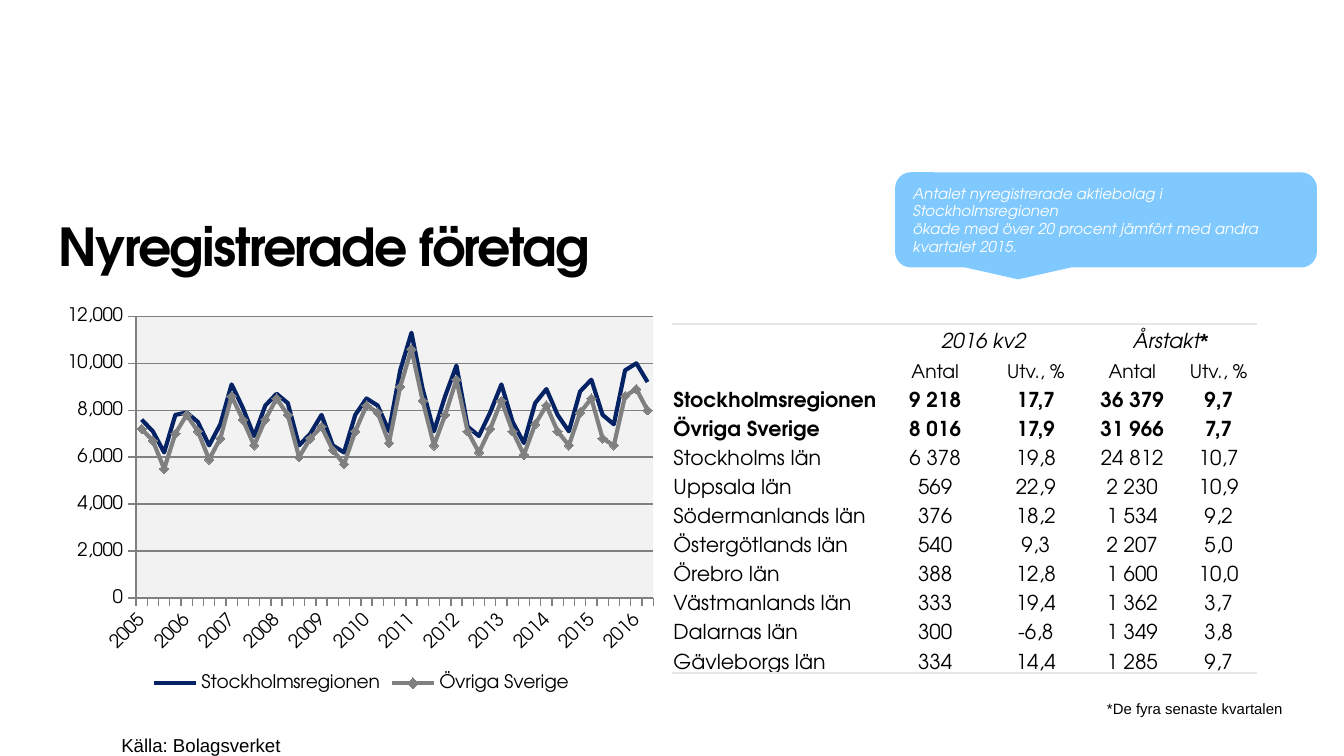
from pptx import Presentation
from pptx.chart.data import CategoryChartData
from pptx.dml.color import RGBColor
from pptx.enum.chart import XL_CHART_TYPE, XL_LEGEND_POSITION, XL_MARKER_STYLE, XL_TICK_MARK
from pptx.enum.shapes import MSO_SHAPE
from pptx.enum.text import MSO_ANCHOR, PP_ALIGN
from pptx.oxml import parse_xml
from pptx.oxml.ns import nsdecls, qn
from pptx.util import Pt

LINE_MARKERS = XL_CHART_TYPE.LINE_MARKERS
LEGEND_BOTTOM = XL_LEGEND_POSITION.BOTTOM
DIAMOND, NO_MARKER = XL_MARKER_STYLE.DIAMOND, XL_MARKER_STYLE.NONE
TICK_OUTSIDE = XL_TICK_MARK.OUTSIDE
CALLOUT = MSO_SHAPE.ROUNDED_RECTANGULAR_CALLOUT
TOP, MIDDLE, BOTTOM = MSO_ANCHOR.TOP, MSO_ANCHOR.MIDDLE, MSO_ANCHOR.BOTTOM
LEFT, CENTER = PP_ALIGN.LEFT, PP_ALIGN.CENTER

HEADING_FONT, NOTE_FONT = "TeX Gyre Adventor", "Arial"
BLACK, WHITE, BLUE, NAVY = "000000", "FFFFFF", "7FC9FF", "052364"
GRAY, PALE, RULE = "808080", "F2F2F2", "E6E6E6"
NO_TABLE_STYLE = "{2D5ABB26-0587-4C30-8999-92F81FD0307C}"

COLUMN_WIDTHS = [113.2, 55.6, 52.2, 51.2, 41.4]
ROWS = [
    ["", "2016 kv2", "", "Årstakt*", ""],
    ["", "Antal", "Utv., %", "Antal", "Utv., %"],
    ["Stockholmsregionen", "9 218", "17,7", "36 379", "9,7"],
    ["Övriga Sverige", "8 016", "17,9", "31 966", "7,7"],
    ["Stockholms län", "6 378", "19,8", "24 812", "10,7"],
    ["Uppsala län", "569", "22,9", "2 230", "10,9"],
    ["Södermanlands län", "376", "18,2", "1 534", "9,2"],
    ["Östergötlands län", "540", "9,3", "2 207", "5,0"],
    ["Örebro län", "388", "12,8", "1 600", "10,0"],
    ["Västmanlands län", "333", "19,4", "1 362", "3,7"],
    ["Dalarnas län", "300", "-6,8", "1 349", "3,8"],
    ["Gävleborgs län", "334", "14,4", "1 285", "9,7"],
]
ROW_FORMATS = {
    0: {"size": Pt(11), "italic": True},
    1: {"size": Pt(10)},
    2: {"size": Pt(11), "bold": True},
    3: {"size": Pt(11), "bold": True},
}
SERIES = {
    "Stockholmsregionen": (NAVY, NO_MARKER, [
        7600, 7100, 6200, 7800, 7900, 7500, 6500, 7400, 9100, 8100, 6900, 8200,
        8700, 8300, 6500, 7000, 7800, 6500, 6200, 7800, 8500, 8200, 7100, 9700,
        11300, 8900, 7100, 8600, 9900, 7300, 6900, 7900, 9100, 7500, 6600, 8300,
        8900, 7800, 7100, 8800, 9300, 7800, 7400, 9700, 10000, 9200]),
    "Övriga Sverige": (GRAY, DIAMOND, [
        7200, 6700, 5500, 7000, 7800, 7100, 5900, 6800, 8600, 7600, 6500, 7600,
        8500, 7800, 6000, 6800, 7300, 6300, 5700, 7100, 8200, 7900, 6600, 9000,
        10600, 8400, 6500, 7800, 9300, 7100, 6200, 7200, 8400, 7100, 6100, 7400,
        8200, 7100, 6500, 7900, 8500, 6800, 6500, 8600, 8900, 8000]),
}


def color(value):
    """Return the colour for a hex string."""
    return RGBColor.from_string(value)


def format_font(font, name, value, formats):
    """Set typeface, colour and the given format values on a font."""
    font.name = name
    font.color.rgb = color(value)
    for attribute, setting in formats.items():
        setattr(font, attribute, setting)


def set_margins(holder, margins):
    """Set the left, top, right and bottom margins of a frame or cell."""
    for side, margin in zip(("left", "top", "right", "bottom"), margins):
        setattr(holder, "margin_" + side, Pt(margin))


def add_text(slide, box, text, name, formats, line_spacing=None, tracking=0):
    """Add a text box of one paragraph without margins."""
    frame = slide.shapes.add_textbox(*map(Pt, box)).text_frame
    frame.word_wrap = True
    frame.vertical_anchor = TOP
    set_margins(frame, (0, 0, 0, 0))
    paragraph = frame.paragraphs[0]
    paragraph.line_spacing = line_spacing
    run = paragraph.add_run()
    run.text = text
    format_font(run.font, name, BLACK, formats)
    if tracking:
        run._r.get_or_add_rPr().set("spc", str(tracking))


def add_callout(slide, box):
    """Add the blue speech bubble."""
    shape = slide.shapes.add_shape(CALLOUT, *map(Pt, box))
    shape.shadow.inherit = False
    shape.fill.solid()
    shape.fill.fore_color.rgb = color(BLUE)
    shape.line.fill.background()
    shape.text_frame.word_wrap = True
    shape.text_frame.vertical_anchor = MIDDLE
    set_margins(shape.text_frame, (7.2, 3.6, 7.2, 3.6))
    paragraph = shape.text_frame.paragraphs[0]
    paragraph.text = ("Antalet nyregistrerade aktiebolag i Stockholmsregionen\v"
                      "ökade med över 20 procent jämfört med andra kvartalet 2015.")
    paragraph.alignment = LEFT
    for run in paragraph.runs:
        format_font(run.font, HEADING_FONT, WHITE, {"size": Pt(8), "italic": True})


def add_border(cell, tag):
    """Draw a pale rule along one side of a cell."""
    cell._tc.get_or_add_tcPr().insert(0, parse_xml(
        f'<a:{tag} {nsdecls("a")} w="12700"><a:solidFill><a:srgbClr val="{RULE}"/>'
        f'</a:solidFill></a:{tag}>'))


def fill_cell(cell, text, alignment, formats):
    """Write one table cell, with any asterisk in upright bold."""
    cell.fill.background()
    cell.vertical_anchor = BOTTOM
    set_margins(cell, (0.75, 0.75, 0.75, 0))
    paragraph = cell.text_frame.paragraphs[0]
    paragraph.alignment = alignment
    for part in filter(None, text.partition("*")):
        run = paragraph.add_run()
        run.text = part
        if part == "*":
            format_font(run.font, NOTE_FONT, BLACK, {**formats, "italic": False, "bold": True})
        else:
            format_font(run.font, HEADING_FONT, BLACK, formats)
    if not text:
        paragraph._p.append(parse_xml(f'<a:endParaRPr {nsdecls("a")} sz="1000"/>'))


def add_county_table(slide, box):
    """Add the table of new companies by county."""
    table = slide.shapes.add_table(len(ROWS), len(COLUMN_WIDTHS), *map(Pt, box)).table
    table.first_row = table.horz_banding = False
    table._tbl.tblPr.find(qn("a:tableStyleId")).text = NO_TABLE_STYLE
    for column, width in zip(table.columns, COLUMN_WIDTHS):
        column.width = Pt(width)
    for row_index, texts in enumerate(ROWS):
        table.rows[row_index].height = Pt(box[3] / len(ROWS))
        formats = ROW_FORMATS.get(row_index, {"size": Pt(11)})
        for column_index, text in enumerate(texts):
            cell = table.cell(row_index, column_index)
            fill_cell(cell, text, CENTER if column_index else LEFT, formats)
            if row_index == 0:
                add_border(cell, "lnT")
            elif row_index == len(ROWS) - 1:
                add_border(cell, "lnB")
    for first in (1, 3):
        table.cell(0, first).merge(table.cell(0, first + 1))


def style_plot_area(chart):
    """Place the plot area within the chart and fill it."""
    plot_area = chart._chartSpace.chart.plotArea
    for layout in plot_area.findall(qn("c:layout")):
        plot_area.remove(layout)
    places = "".join(f'<c:{tag} val="{value}"/>' for tag, value in (
        ("layoutTarget", "inner"), ("xMode", "edge"), ("yMode", "edge"),
        ("x", 0.13), ("y", 0.04), ("w", 0.85), ("h", 0.71)))
    plot_area.insert(0, parse_xml(
        f'<c:layout {nsdecls("c")}><c:manualLayout>{places}</c:manualLayout></c:layout>'))
    plot_area.append(parse_xml(
        f'<c:spPr {nsdecls("c", "a")}><a:solidFill><a:srgbClr val="{PALE}"/>'
        f'</a:solidFill></c:spPr>'))


def add_quarter_chart(slide, box):
    """Add the line chart of new companies by quarter."""
    data = CategoryChartData(number_format="#,##0")
    quarters = len(SERIES["Övriga Sverige"][2])
    data.categories = ["" if index % 4 else str(2005 + index // 4) for index in range(quarters)]
    for name, (_, _, values) in SERIES.items():
        data.add_series(name, values)
    chart = slide.shapes.add_chart(LINE_MARKERS, *map(Pt, box), data).chart
    format_font(chart.font, HEADING_FONT, BLACK, {"size": Pt(10)})
    chart.has_title = False
    chart.has_legend = True
    chart.legend.position = LEGEND_BOTTOM
    chart.legend.include_in_layout = False
    chart.plots[0].vary_by_categories = False
    for series, (shade, marker, _) in zip(chart.plots[0].series, SERIES.values()):
        series.smooth = False
        series.format.line.color.rgb = color(shade)
        series.format.line.width = Pt(2.25)
        series.marker.style = marker
        if marker == DIAMOND:
            series.marker.size = 5
            series.marker.format.fill.solid()
            series.marker.format.fill.fore_color.rgb = color(shade)
            series.marker.format.line.color.rgb = color(shade)
    value_axis, category_axis = chart.value_axis, chart.category_axis
    scale = {"minimum_scale": 0, "maximum_scale": 12000, "major_unit": 2000,
             "has_major_gridlines": True}
    for attribute, setting in scale.items():
        setattr(value_axis, attribute, setting)
    value_axis.tick_labels.number_format = "#,##0"
    value_axis.tick_labels.number_format_is_linked = False
    for axis in (value_axis, category_axis):
        axis.major_tick_mark = TICK_OUTSIDE
        format_font(axis.tick_labels.font, HEADING_FONT, BLACK, {"size": Pt(10)})
    for part in (value_axis, category_axis, value_axis.major_gridlines):
        part.format.line.color.rgb = color(GRAY)
        part.format.line.width = Pt(0.75)
    category_axis._element.find(qn("c:txPr")).find(qn("a:bodyPr")).set("rot", "-2700000")
    style_plot_area(chart)


def main():
    """Build and save the slide."""
    presentation = Presentation()
    presentation.slide_width, presentation.slide_height = Pt(720), Pt(405)
    slide = presentation.slides.add_slide(presentation.slide_layouts[6])
    add_text(slide, (31.5, 115, 447, 57.5), "Nyregistrerade företag", HEADING_FONT,
             {"size": Pt(28), "bold": True}, tracking=-90)
    add_text(slide, (65, 381, 110, 24), "Källa: Bolagsverket", NOTE_FONT,
             {"size": Pt(10)}, line_spacing=Pt(24))
    add_text(slide, (593, 360.5, 115, 36), "*De fyra senaste kvartalen", NOTE_FONT,
             {"size": Pt(8)}, line_spacing=Pt(24))
    add_county_table(slide, (360, 173.5, sum(COLUMN_WIDTHS), 187.2))
    add_callout(slide, (479.5, 92.3, 226, 51))
    add_quarter_chart(slide, (30.5, 161, 326, 212.5))
    presentation.save("out.pptx")


if __name__ == "__main__":
    main()
